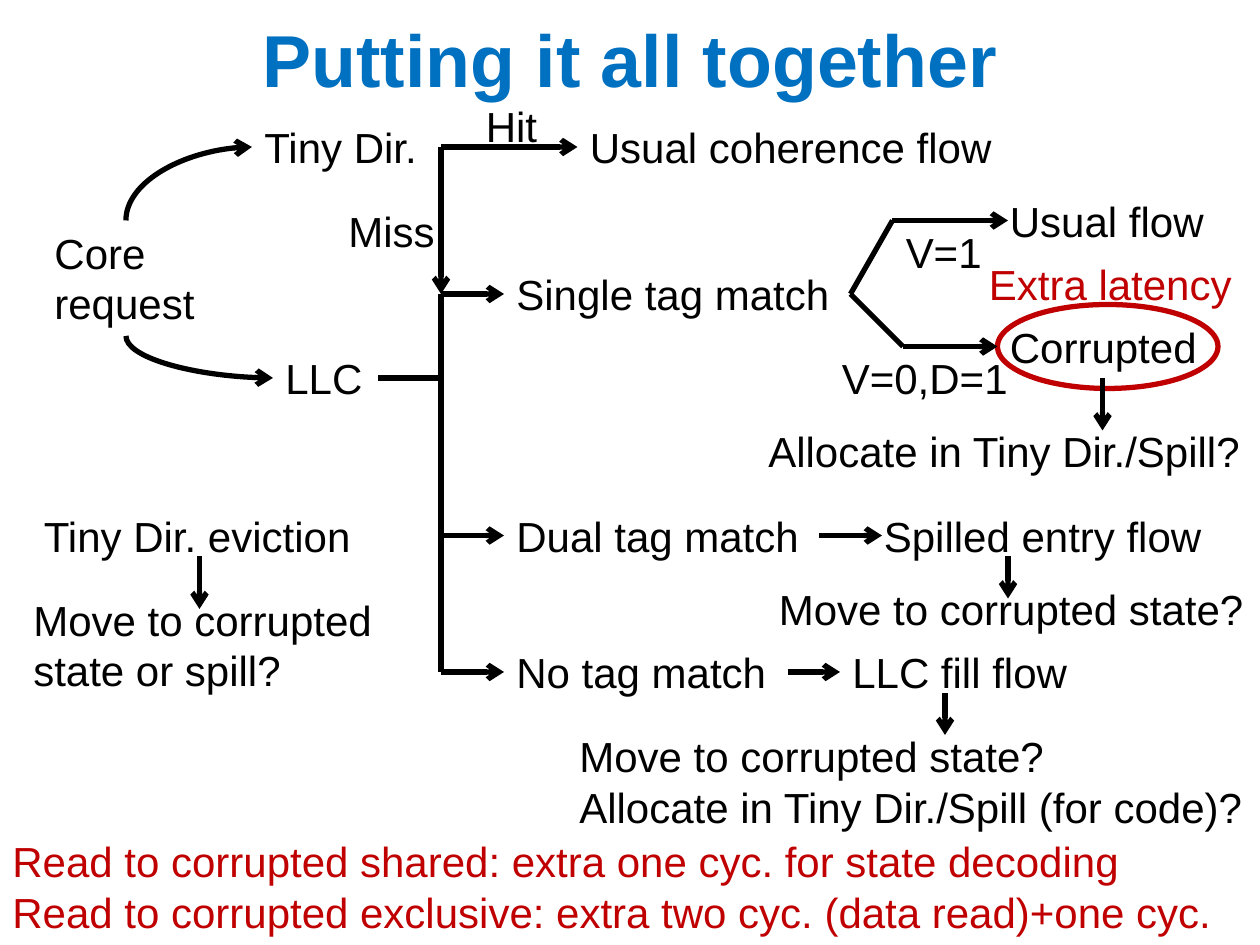
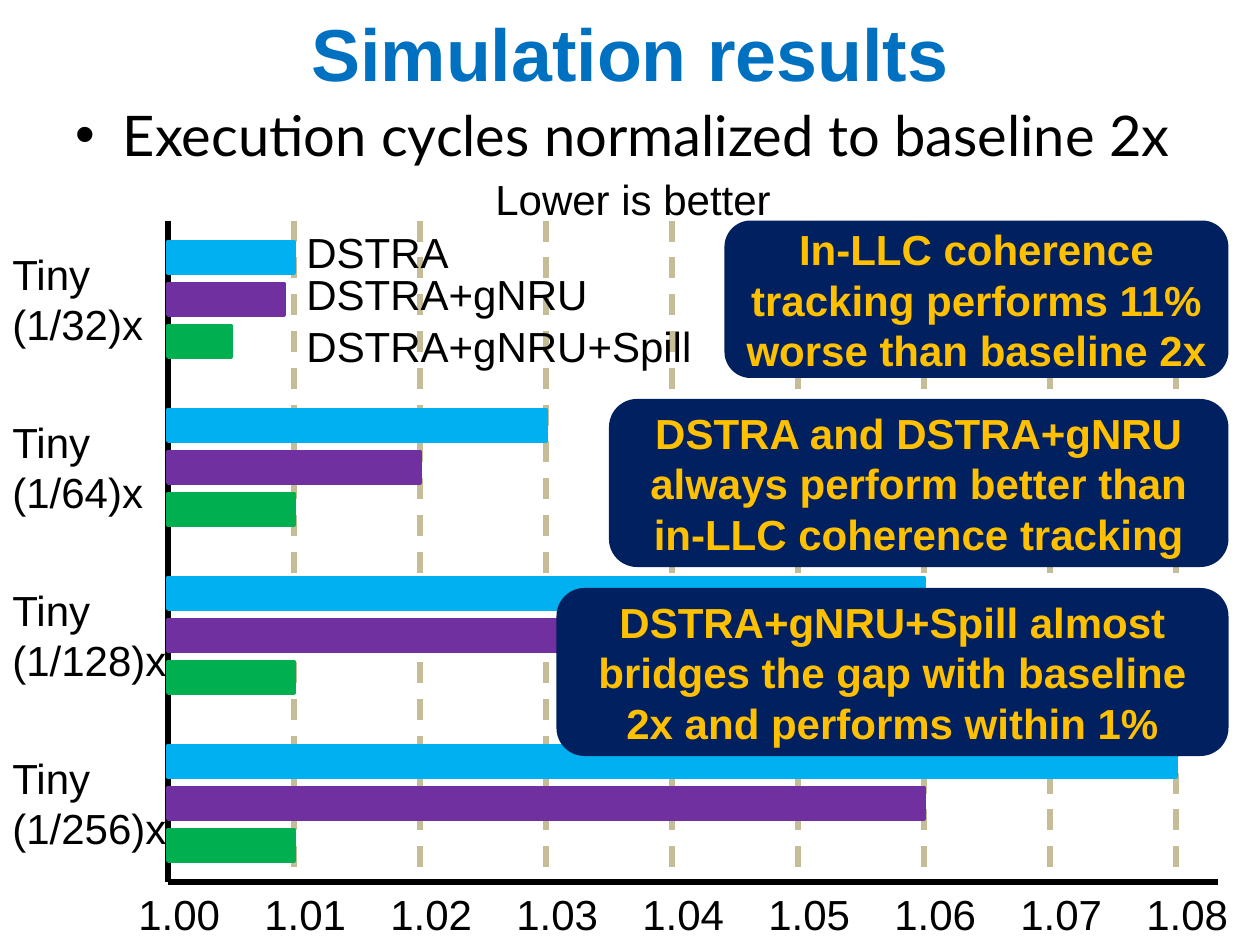
from lxml.etree import SubElement
from pptx import Presentation
from pptx.dml.color import RGBColor
from pptx.enum.dml import MSO_LINE
from pptx.enum.shapes import MSO_CONNECTOR, MSO_SHAPE
from pptx.enum.text import MSO_ANCHOR, PP_ALIGN
from pptx.oxml.ns import qn
from pptx.util import Pt

COLORS = {
    "title": "0070C0", "text": "000000", "cost": "C00000", "grid": "C4BD97",
    "DSTRA": "00B0F0", "DSTRA+gNRU": "7030A0", "DSTRA+gNRU+Spill": "00B050",
    "callout": "002060", "callout text": "FFC000",
}
C = {name: RGBColor.from_string(value) for name, value in COLORS.items()}
FONT = "Arial"


def write(sp, text, color="text", size=24, bold=False, font=FONT):
    sp.text_frame.text = text
    for p in sp.text_frame.paragraphs:
        for r in p.runs:
            r.font.name, r.font.size, r.font.bold = font, Pt(size), bold
            r.font.color.rgb = C[color]


def add_text(slide, box, text, color="text"):
    sp = slide.shapes.add_textbox(*map(Pt, box))
    sp.text_frame.word_wrap = True
    write(sp, text, color)
    return sp


prs = Presentation()
prs.slide_width, prs.slide_height = Pt(720), Pt(540)

# Slides and titles
slides = []
for layout, title, height in ((5, "Putting it all together", 66),
                              (1, "Simulation results", 60)):
    slide = prs.slides.add_slide(prs.slide_layouts[layout])
    sp = slide.shapes.title
    sp.left, sp.top, sp.width, sp.height = Pt(0), Pt(0), Pt(720), Pt(height)
    write(sp, title, "title", 42, True)
    slides.append(slide)
flow, results = slides

# Slide 1: steps of the flow
steps = {
    "core": (24, 126.5, 96, 66, "Core\nrequest"),
    "tiny": (144, 66, 108, 36, "Tiny Dir."),
    "llc": (156, 198, 60, 36, "LLC"),
    "hit": (270.5, 54, 54, 36, "Hit"),
    "coherence": (330, 66, 252, 36, "Usual coherence flow"),
    "miss": (192, 114, 66, 36, "Miss"),
    "single": (288, 150, 198, 36, "Single tag match"),
    "valid": (510.5, 126, 60, 36, "V=1"),
    "usual": (570, 108, 126, 36, "Usual flow"),
    "dirty": (474, 198, 114, 36, "V=0,D=1"),
    "corrupted": (570, 180, 126, 36, "Corrupted"),
    "allocate": (432, 239.5, 288, 36, "Allocate in Tiny Dir./Spill?"),
    "dual": (288, 288, 180, 36, "Dual tag match"),
    "spilled": (498, 288, 198, 36, "Spilled entry flow"),
    "move": (438, 330, 282, 36, "Move to corrupted state?"),
    "none": (288, 366, 162, 36, "No tag match"),
    "fill": (480, 366, 138, 36, "LLC fill flow"),
    "after fill": (324, 414, 396, 66,
                   "Move to corrupted state?\nAllocate in Tiny Dir./Spill (for code)?"),
    "eviction": (18, 288, 192, 36, "Tiny Dir. eviction"),
    "after eviction": (12, 336, 210, 66, "Move to corrupted state or spill?"),
}
boxes = {name: add_text(flow, step[:4], step[4]) for name, step in steps.items()}

sp = flow.shapes.add_shape(MSO_SHAPE.OVAL, Pt(570), Pt(174), Pt(126), Pt(48))
sp.shadow.inherit = False
sp.fill.background()
sp.line.color.rgb, sp.line.width = C["cost"], Pt(3)
add_text(flow, (558, 144, 156, 36), "Extra latency", "cost")
add_text(flow, (0, 474, 720, 66),
         "Read to corrupted shared: extra one cyc. for state decoding\n"
         "Read to corrupted exclusive: extra two cyc. (data read)+one cyc.", "cost")

# An end is a point or the name of a step; lines leave right sides and enter left sides.
LEFT, RIGHT = 1, 3
STRAIGHT, CURVE = MSO_CONNECTOR.STRAIGHT, MSO_CONNECTOR.CURVE
arrows = [
    ("tiny", "coherence"), ((252, 84), (252, 168)), ((252, 168), "single"),
    ((510, 126), (576, 126)), ((516, 198), "corrupted"), ((630, 216), (630, 246)),
    ((252, 306), "dual"), ("dual", (504, 306)), ((576, 318), (576, 342)),
    ((252, 384), "none"), ("none", "fill"), ((540, 396), (540, 420)),
    ((114, 318), (114, 348)),
]
plain = [("llc", (252, 216)), ((252, 168), (252, 306)), ((252, 306), (252, 384)),
         ("single", (510, 126)), ("single", (516, 198))]
# Curves start at the arrowhead, so that they leave it horizontally.
curves = [((144, 84), (72, 126)), ((156, 216), (72, 192))]

# Slide 2: axes meet at the origin, and a step of 0.01 is 72 points wide
origin, top, bottom, step = 96, 126, 504, 72
axes = [((origin, top), (origin, bottom)), ((origin, bottom), (696, bottom))]
grid = [((origin + step * i, top), (origin + step * i, bottom)) for i in range(1, 9)]

for slide, kind, head, color, lines in (
    (flow, STRAIGHT, "a:tailEnd", "text", arrows),
    (flow, STRAIGHT, None, "text", plain),
    (flow, CURVE, "a:headEnd", "text", curves),
    (results, STRAIGHT, None, "text", axes),
    (results, STRAIGHT, None, "grid", grid),
):
    for start, end in lines:
        points = [(0, 0) if e in boxes else e for e in (start, end)]
        line = slide.shapes.add_connector(kind, *map(Pt, points[0] + points[1]))
        if start in boxes:
            line.begin_connect(boxes[start], RIGHT)
        if end in boxes:
            line.end_connect(boxes[end], LEFT)
        line.line.color.rgb, line.line.width = C[color], Pt(3)
        if color == "grid":
            line.line.dash_style = MSO_LINE.DASH
        props = line._element.spPr
        if kind == CURVE:
            props.find(qn("a:prstGeom")).set("prst", "curvedConnector2")
        if head:
            SubElement(props.find(qn("a:ln")), qn(head), type="arrow")
        SubElement(props, qn("a:effectLst"))

# Bullet and scale
sp = results.placeholders[1]
sp.left, sp.top, sp.width, sp.height = Pt(36), Pt(54), Pt(684), Pt(486)
write(sp, "Execution cycles normalized to baseline 2x", size=32, font="Lato")
for i in range(9):
    add_text(results, (72 + step * i, bottom, 66, 36), f"{1 + i / 100:.2f}")

# Bars: extra cycles over the baseline in percent, one value per directory size
sizes = ["Tiny (1/32)x", "Tiny (1/64)x", "Tiny (1/128)x", "Tiny (1/256)x"]
extra_cycles = {
    "DSTRA": (1, 3, 6, 8),
    "DSTRA+gNRU": (0.92, 2, 5, 6),
    "DSTRA+gNRU+Spill": (0.5, 1, 1, 1),
}
for i, size in enumerate(sizes):
    y = 138 + 96 * i
    add_text(results, (0, y + 0.5, 108, 66), size)
    for j, (scheme, extra) in enumerate(extra_cycles.items()):
        sp = results.shapes.add_shape(MSO_SHAPE.RECTANGLE, Pt(origin), Pt(y + 24 * j),
                                      Pt(step * extra[i]), Pt(18))
        sp.shadow.inherit = False
        sp.fill.solid()
        sp.fill.fore_color.rgb = C[scheme]
        sp.line.color.rgb, sp.line.width = C[scheme], Pt(2)
for scheme, y, width in zip(extra_cycles, (126, 150, 179.5), (102, 180, 240)):
    add_text(results, (168, y, width, 36), scheme)

# Callouts share their right edge
for x, y, height, text in (
    (414, 126, 90, "In-LLC coherence tracking performs 11% worse than baseline 2x"),
    (348, 228, 96, "DSTRA and DSTRA+gNRU always perform better than "
                   "in-LLC coherence tracking"),
    (318, 336, 96, "DSTRA+gNRU+Spill almost bridges the gap with baseline 2x "
                   "and performs within 1%"),
):
    sp = results.shapes.add_shape(MSO_SHAPE.ROUNDED_RECTANGLE,
                                  Pt(x), Pt(y), Pt(702 - x), Pt(height))
    sp.shadow.inherit = False
    sp.fill.solid()
    sp.fill.fore_color.rgb = C["callout"]
    sp.line.fill.background()
    write(sp, text, "callout text", bold=True)
    sp.text_frame.vertical_anchor = MSO_ANCHOR.MIDDLE
    sp.text_frame.paragraphs[0].alignment = PP_ALIGN.CENTER
add_text(results, (276, 95.5, 180, 36), "Lower is better")

prs.save("out.pptx")
